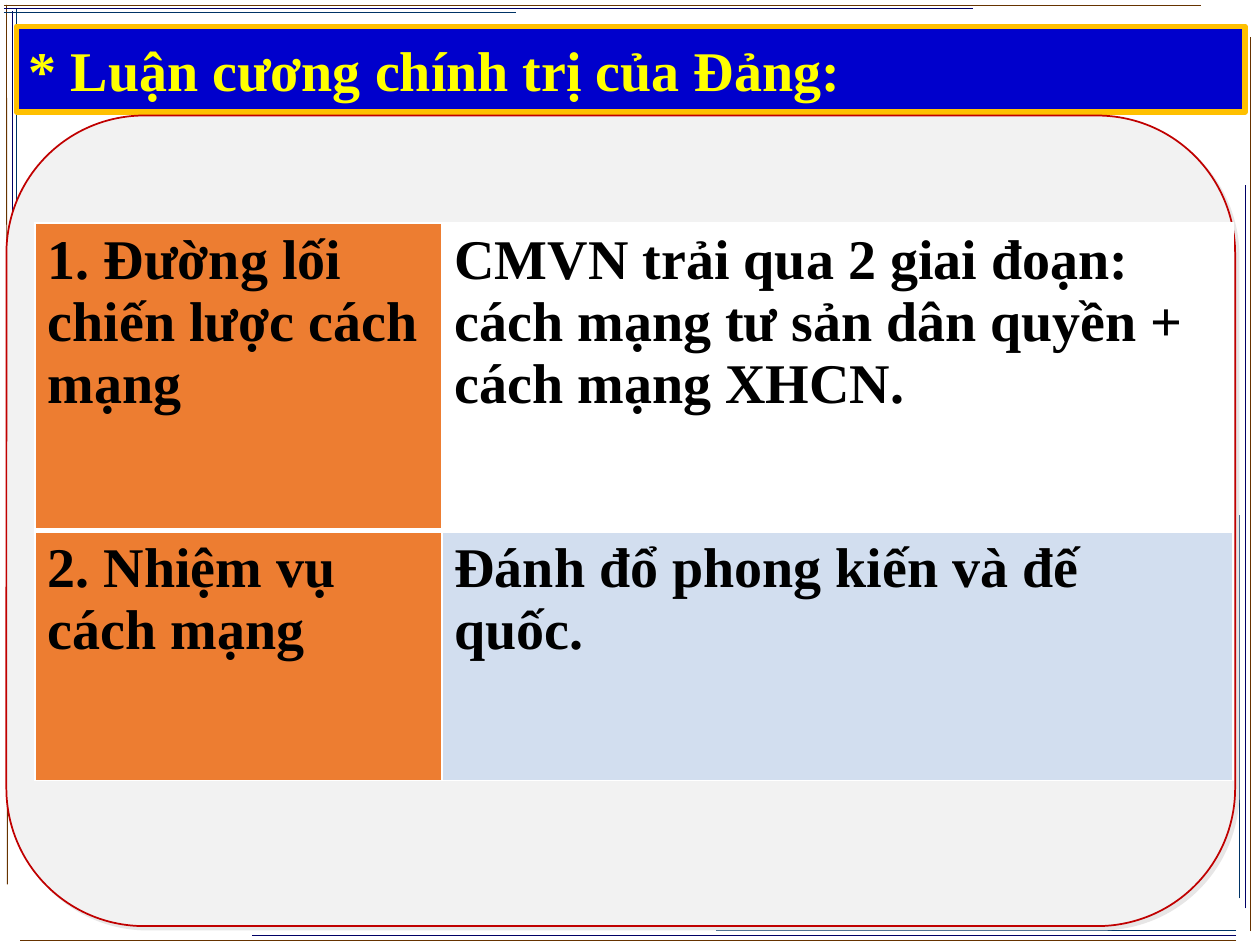
"""Build the slide on the Party's political platform."""
from lxml import etree
from pptx import Presentation
from pptx.dml.color import RGBColor
from pptx.enum.shapes import MSO_CONNECTOR as CONNECTOR, MSO_SHAPE as SHAPE
from pptx.enum.text import MSO_ANCHOR as ANCHOR, PP_ALIGN as ALIGN
from pptx.oxml import parse_xml
from pptx.oxml.ns import nsdecls, qn
from pptx.util import Cm, Pt


def color(value):
    return RGBColor.from_string(value)


def style_font(font, value):
    font.name = "Times New Roman"
    font.size = Pt(32)
    font.bold = True
    font.color.rgb = color(value)


presentation = Presentation()
presentation.slide_width = Cm(25.4)
presentation.slide_height = Cm(19.05)
slide = presentation.slides.add_slide(presentation.slide_layouts[6])

frame_colors = ["663300", "000066", "003366"]
frame_sides = [
    [(0.13, 0.1, 0.15, 17.83), (0.25, 0.23, 0.25, 8.26), (0.33, 0.18, 0.33, 4.42)],
    [(0.08, 0.1, 24.21, 0.1), (0.08, 0.18, 19.61, 0.18), (0.08, 0.25, 10.41, 0.25)],
    [(25.2, 18.77, 25.2, 0.74), (25.1, 18.31, 25.1, 3.73), (24.99, 18.11, 24.99, 10.39)],
    [(24.92, 18.95, 0.41, 18.95), (24.92, 18.85, 5.08, 18.85), (24.92, 18.75, 14.43, 18.75)],
]
for side in frame_sides:
    for ends, line_color in zip(side, frame_colors):
        line = slide.shapes.add_connector(CONNECTOR.STRAIGHT, *map(Cm, ends))
        line.line.color.rgb = color(line_color)
        line.line.width = Pt(0.5)
        etree.SubElement(line._element.spPr, qn("a:effectLst"))

title = slide.shapes.add_shape(SHAPE.RECTANGLE, Cm(0.33), Cm(0.53), Cm(24.77), Cm(1.73))
panel = slide.shapes.add_shape(SHAPE.ROUNDED_RECTANGLE, Cm(0.13), Cm(2.33), Cm(24.77), Cm(16.34))
for shape, fill, outline, width in [(title, "0000CC", "FFC000", 3), (panel, "F2F2F2", "C00000", 1)]:
    shape.shadow.inherit = False
    shape.fill.solid()
    shape.fill.fore_color.rgb = color(fill)
    shape.line.color.rgb = color(outline)
    shape.line.width = Pt(width)

title_frame = title.text_frame
title_frame.word_wrap = True
title_frame.vertical_anchor = ANCHOR.TOP
title_frame.margin_top = Cm(0.1)
title_frame.margin_bottom = Cm(0)
paragraph = title_frame.paragraphs[0]
paragraph.text = "* Luận cương chính trị của Đảng:"
paragraph.alignment = ALIGN.LEFT
paragraph.line_spacing = 1.07
style_font(paragraph.font, "FFFF00")

panel.adjustments[0] = 0.17
panel._element.spPr.find(qn("a:effectLst")).append(parse_xml(
    f'<a:outerShdw {nsdecls("a")} dist="35560" dir="2700000" algn="ctr" rotWithShape="0">'
    '<a:srgbClr val="E7E6E6"/></a:outerShdw>'))

rows = [
    ("1. Đường lối chiến lược cách mạng",
     "CMVN trải qua 2 giai đoạn: cách mạng tư sản dân quyền + cách mạng XHCN."),
    ("2. Nhiệm vụ cách mạng", "Đánh đổ phong kiến và đế quốc."),
]
fills = [("ED7D31", "FFFFFF"), ("ED7D31", "D2DEEF")]
border_widths = [{"L": 1, "R": 1, "T": 1, "B": 3}, {"L": 1, "R": 1, "T": 3, "B": 1}]
table = slide.shapes.add_table(2, 2, Cm(0.71), Cm(4.5), Cm(24.15), Cm(11.23)).table
table.first_row = False
table.horz_banding = False
for column, width in zip(table.columns, (8.2, 15.95)):
    column.width = Cm(width)
for row, height in zip(table.rows, (6.2, 5.03)):
    row.height = Cm(height)
for row, texts, row_fills, borders in zip(table.rows, rows, fills, border_widths):
    for cell, text, fill in zip(row.cells, texts, row_fills):
        cell.text = text
        style_font(cell.text_frame.paragraphs[0].font, "000000")
        properties = cell._tc.get_or_add_tcPr()
        for edge, width in borders.items():
            properties.append(parse_xml(
                f'<a:ln{edge} {nsdecls("a")} w="{Pt(width)}"><a:solidFill>'
                f'<a:srgbClr val="FFFFFF"/></a:solidFill></a:ln{edge}>'))
        cell.fill.solid()
        cell.fill.fore_color.rgb = color(fill)

presentation.save("out.pptx")
